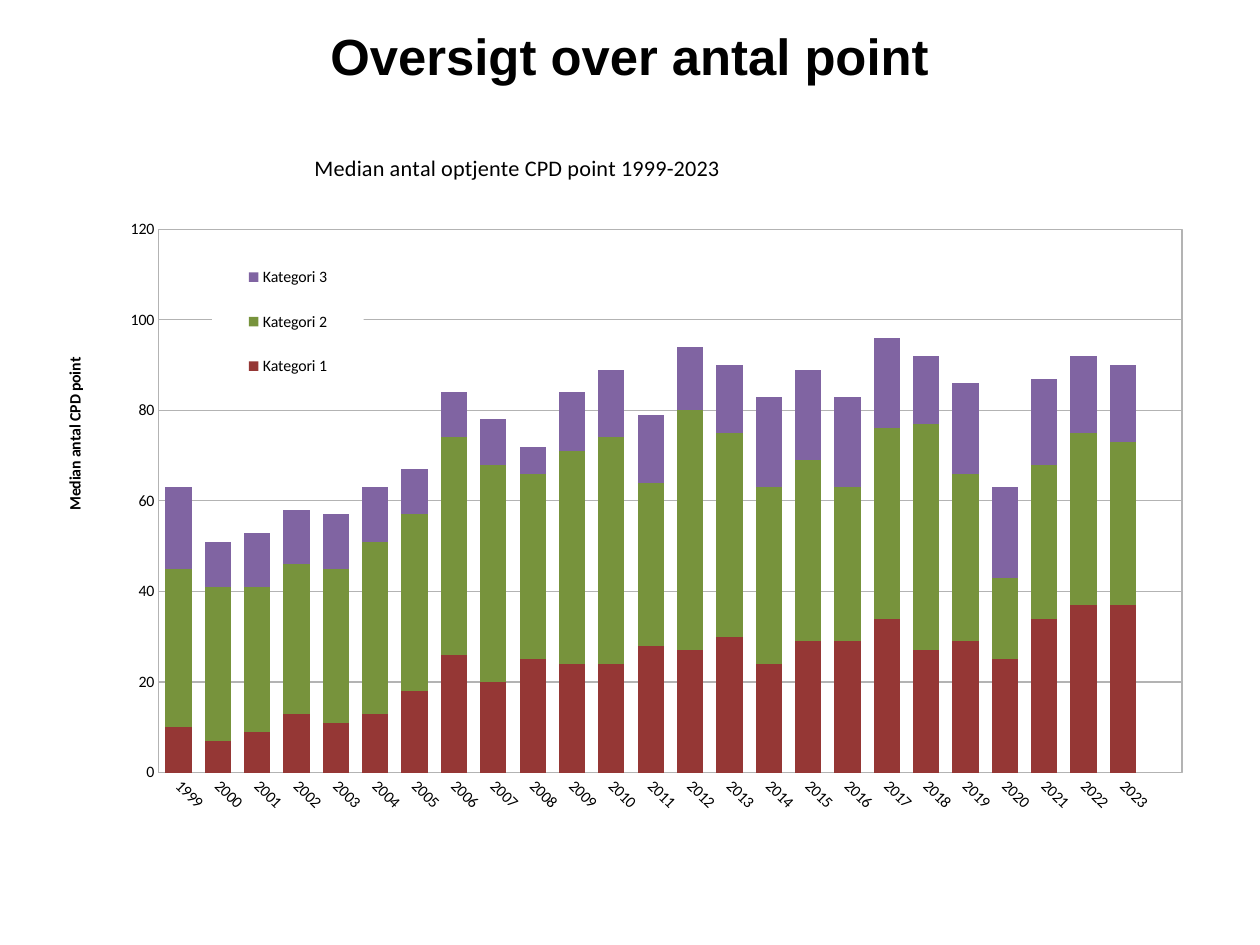
from dataclasses import dataclass

from lxml import etree
from pptx import Presentation
from pptx import util as u
from pptx.chart.data import CategoryChartData
from pptx.dml.color import RGBColor
from pptx.enum import chart as ch, text
from pptx.oxml import parse_xml
from pptx.oxml.ns import nsdecls, qn

WIDE, HIGH = u.Cm(28), u.Cm(21)
BLACK, GREY, WHITE = "000000", "B3B3B3", "FFFFFF"


@dataclass(frozen=True)
class Box:
    """Shares of the width and height of the slide or the chart."""
    x: float
    y: float
    w: float = 0
    h: float = 0


@dataclass(frozen=True)
class Series:
    name: str
    color: str
    vals: tuple


SERIES = (
    Series("Kategori 1", "953735",
           (10, 7, 9, 13, 11, 13, 18, 26, 20, 25, 24, 24, 28, 27, 30, 24,
            29, 29, 34, 27, 29, 25, 34, 37, 37, None)),
    Series("Kategori 2", "77933C",
           (35, 34, 32, 33, 34, 38, 39, 48, 48, 41, 47, 50, 36, 53, 45, 39,
            40, 34, 42, 50, 37, 18, 34, 38, 36, None)),
    Series("Kategori 3", "8064A2",
           (18, 10, 12, 12, 12, 12, 10, 10, 10, 6, 13, 15, 15, 14, 15, 20,
            20, 20, 20, 15, 20, 20, 19, 17, 17, None)),
)
YEARS = [str(year) for year in range(1999, 2024)] + [""]

HEAD = Box(0.05, 0.014, 0.9, 0.088)
CHART = Box(0.032, 0.128, 0.94, 0.819)
PLOT = Box(0.1, 0.14, 0.864, 0.702)
KEY = Box(0.145, 0.156, 0.128, 0.207)
NAME = Box(0.228, 0.035)
SIDE = Box(0.018, 0.302)


def rgb(code: str) -> RGBColor:
    return RGBColor.from_string(code)


def frame(box: Box) -> tuple:
    return (round(box.x * WIDE), round(box.y * HIGH),
            round(box.w * WIDE), round(box.h * HIGH))


def style(font, size: float, face: str, bold: bool = False) -> None:
    font.size, font.name, font.bold = u.Pt(size), face, bold
    font.color.rgb = rgb(BLACK)


def write(frm, words: str, size: float, face: str, bold: bool) -> None:
    run = frm.paragraphs[0].add_run()
    run.text = words
    style(run.font, size, face, bold)


def rule(line) -> None:
    line.color.rgb = rgb(GREY)
    line.width = u.Pt(0.75)


def place(part, spot: int, box: Box, inner: bool = False) -> None:
    """Give a chart part a manual layout as its child number spot."""
    for old in part.findall(qn("c:layout")):
        part.remove(old)
    rows = [("layoutTarget", "inner")] if inner else []
    rows += [("xMode", "edge"), ("yMode", "edge"), ("x", box.x), ("y", box.y)]
    if box.w:
        rows += [("w", box.w), ("h", box.h)]
    body = "".join(f'<c:{tag} val="{val}"/>' for tag, val in rows)
    part.insert(spot, parse_xml(
        f'<c:layout {nsdecls("c")}><c:manualLayout>{body}'
        '</c:manualLayout></c:layout>'))


def paint(fill: str, line: str) -> etree._Element:
    def solid(code: str) -> str:
        return (f'<a:solidFill><a:srgbClr val="{code}"/></a:solidFill>'
                if code else "<a:noFill/>")
    return parse_xml(f'<c:spPr {nsdecls("c", "a")}>{solid(fill)}'
                     f'<a:ln w="9525">{solid(line)}</a:ln></c:spPr>')


def add_head(slide) -> None:
    head = slide.shapes.title
    head.left, head.top, head.width, head.height = frame(HEAD)
    frm = head.text_frame
    frm.margin_left = frm.margin_right = 0
    frm.margin_top = frm.margin_bottom = 0
    frm.vertical_anchor = text.MSO_ANCHOR.MIDDLE
    frm.word_wrap = True
    frm.paragraphs[0].alignment = text.PP_ALIGN.CENTER
    write(frm, "Oversigt over antal point", 32, "Arial", True)


def set_axes(chart) -> None:
    cat, val = chart.category_axis, chart.value_axis
    for axis in (cat, val):
        axis.major_tick_mark = axis.minor_tick_mark = ch.XL_TICK_MARK.NONE
        style(axis.tick_labels.font, 10, "Calibri")
        rule(axis.format.line)
    turn = chart.element.find(
        f'.//{qn("c:catAx")}/{qn("c:txPr")}/{qn("a:bodyPr")}')
    turn.set("rot", str(45 * 60000))
    val.minimum_scale, val.maximum_scale, val.major_unit = 0, 120, 20
    val.tick_labels.number_format = "#,##0"
    val.tick_labels.number_format_is_linked = False
    rule(val.major_gridlines.format.line)
    write(val.axis_title.text_frame, "Median antal CPD point",
          10, "Calibri", True)


def set_parts(chart) -> None:
    """Place and paint the title, plot, side title and legend."""
    root = chart.element.find(qn("c:chart"))
    plot, key = root.find(qn("c:plotArea")), root.find(qn("c:legend"))
    place(root.find(qn("c:title")), 1, NAME)
    place(plot.find(f'{qn("c:valAx")}/{qn("c:title")}'), 1, SIDE)
    place(plot, 0, PLOT, inner=True)
    place(key, 1, KEY)
    plot.append(paint("", GREY))
    key.find(qn("c:txPr")).addprevious(paint(WHITE, ""))


def add_chart(slide) -> None:
    data = CategoryChartData()
    data.categories = YEARS
    for item in SERIES:
        data.add_series(item.name, item.vals)
    chart = slide.shapes.add_chart(
        ch.XL_CHART_TYPE.COLUMN_STACKED, *frame(CHART), data).chart
    style(chart.font, 10, "Calibri")
    chart.has_title = True
    write(chart.chart_title.text_frame,
          "Median antal optjente CPD point 1999-2023", 14, "Calibri", False)
    chart.has_legend = True
    chart.legend.position = ch.XL_LEGEND_POSITION.RIGHT
    chart.legend.include_in_layout = False
    style(chart.legend.font, 10, "Calibri")
    bars = chart.plots[0]
    bars.gap_width, bars.overlap, bars.vary_by_categories = 50, 100, False
    for bar, item in zip(bars.series, SERIES):
        bar.format.fill.solid()
        bar.format.fill.fore_color.rgb = rgb(item.color)
        bar.format.line.fill.background()
    set_axes(chart)
    set_parts(chart)


def main() -> None:
    deck = Presentation()
    deck.slide_width = WIDE
    deck.slide_height = HIGH
    slide = deck.slides.add_slide(deck.slide_layouts[5])
    add_head(slide)
    add_chart(slide)
    deck.save("out.pptx")


if __name__ == "__main__":
    main()
